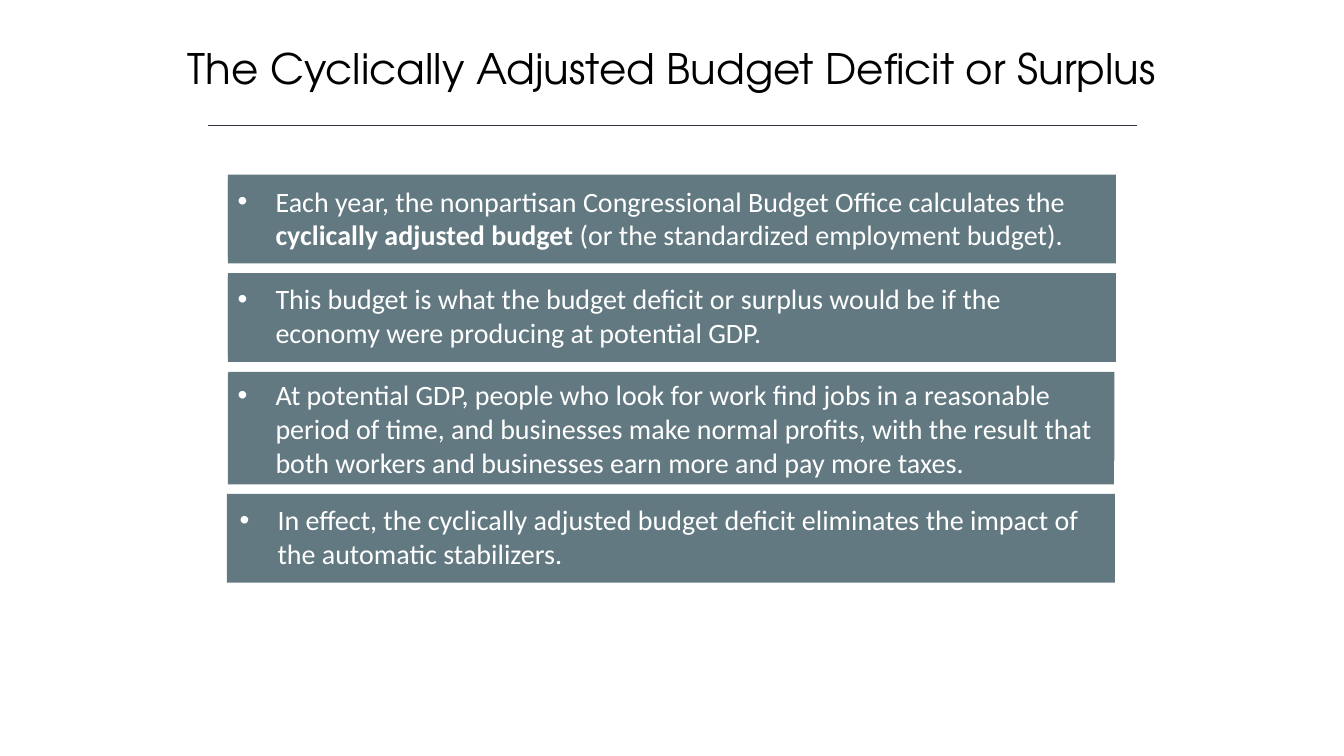
from dataclasses import dataclass

from lxml import etree
from pptx import Presentation
from pptx.dml.color import RGBColor
from pptx.enum.shapes import MSO_CONNECTOR, MSO_SHAPE
from pptx.enum.text import MSO_ANCHOR, MSO_AUTO_SIZE, PP_ALIGN
from pptx.oxml.ns import qn
from pptx.util import Pt

RECTANGLE = MSO_SHAPE.RECTANGLE
STRAIGHT = MSO_CONNECTOR.STRAIGHT
TOP, MIDDLE = MSO_ANCHOR.TOP, MSO_ANCHOR.MIDDLE
LEFT, CENTER = PP_ALIGN.LEFT, PP_ALIGN.CENTER
FIXED, GROW = MSO_AUTO_SIZE.NONE, MSO_AUTO_SIZE.SHAPE_TO_FIT_TEXT
TITLE_ONLY = 5


@dataclass(frozen=True)
class Theme:
    heading: str = "000000"
    rule: str = "323542"
    card: str = "627981"
    card_text: str = "FFFFFF"
    heading_font: str = "TeX Gyre Adventor"
    body_font: str = "Calibri"
    heading_size: float = 30
    body_size: float = 20
    bullet_indent: float = 27


def set_values(target, values):
    for name, value in values.items():
        setattr(target, name, value)


class SlideBuilder:
    def __init__(self, deck, theme):
        self.theme = theme
        self.slide = deck.slides.add_slide(deck.slide_layouts[TITLE_ONLY])

    def add_span(self, para, text, color, **font_values):
        span = para.add_run()
        span.text = text
        set_values(span.font, font_values)
        span.font.color.rgb = RGBColor.from_string(color)

    def title(self, text, left, top, width, height):
        theme = self.theme
        box = self.slide.shapes.title
        set_values(box, {"left": Pt(left), "top": Pt(top),
                         "width": Pt(width), "height": Pt(height)})
        set_values(box.text_frame, {"auto_size": FIXED, "word_wrap": True,
                                    "vertical_anchor": MIDDLE})
        para = box.text_frame.paragraphs[0]
        para.alignment = CENTER
        self.add_span(para, text, theme.heading,
                      name=theme.heading_font, size=Pt(theme.heading_size))

    def rule(self, left, right, top):
        line = self.slide.shapes.add_connector(
            STRAIGHT, Pt(left), Pt(top), Pt(right), Pt(top))
        line.line.width = Pt(1)
        line.line.color.rgb = RGBColor.from_string(self.theme.rule)
        etree.SubElement(line._element.spPr, qn("a:effectLst"))

    def panel(self, shapes, left, top, width, height):
        box = shapes.add_shape(RECTANGLE, Pt(left), Pt(top), Pt(width), Pt(height))
        box.shadow.inherit = False
        box.fill.solid()
        box.fill.fore_color.rgb = RGBColor.from_string(self.theme.card)
        box.line.fill.background()
        return box

    def bullet(self, para):
        indent = Pt(self.theme.bullet_indent)
        properties = para._p.get_or_add_pPr()
        properties.set("marL", str(indent))
        properties.set("indent", str(-indent))
        etree.SubElement(properties, qn("a:buFont"), typeface="Arial")
        etree.SubElement(properties, qn("a:buChar"), char="•")

    def card(self, back, front, spans):
        """Group a back panel with a text panel; spans are (text, bold) pairs."""
        theme = self.theme
        shapes = self.slide.shapes.add_group_shape().shapes
        self.panel(shapes, *back)
        frame = self.panel(shapes, *front).text_frame
        set_values(frame, {"auto_size": GROW, "word_wrap": True,
                           "vertical_anchor": TOP})
        para = frame.paragraphs[0]
        para.alignment = LEFT
        self.bullet(para)
        for text, bold in spans:
            self.add_span(para, text, theme.card_text, name=theme.body_font,
                          size=Pt(theme.body_size), bold=bold)


PANEL_HEIGHT = 63.36
TWO_LINES, THREE_LINES = 55.7, 79.7

# Each card: back (left, top, width), front (left, top, width, height), spans
CARDS = [
    ((162.72, 124.8, 634.32), (162.72, 128, 634.32, TWO_LINES),
     [("Each year, the nonpartisan Congressional Budget Office calculates the ", False),
      ("cyclically adjusted budget ", True),
      ("(or the standardized employment budget).", False)]),
    ((162.72, 195.12, 634.32), (162.72, 197.8, 634.32, TWO_LINES),
     [("This budget is what the budget deficit or surplus would be if the "
       "economy were producing at potential GDP.", False)]),
    ((163.2, 265.68, 632.88), (162.72, 266.4, 632.88, THREE_LINES),
     [("At potential GDP, people who look for work find jobs in a reasonable "
       "period of time, and businesses make normal profits, with the result that "
       "both workers and businesses earn more and pay more taxes.", False)]),
    ((162, 352.8, 634.32), (164.16, 355.68, 631.44, TWO_LINES),
     [("In effect, the cyclically adjusted budget deficit eliminates the impact "
       "of the automatic stabilizers.", False)]),
]


def main():
    deck = Presentation()
    set_values(deck, {"slide_width": Pt(960), "slide_height": Pt(540)})
    page = SlideBuilder(deck, Theme())
    page.title("The Cyclically Adjusted Budget Deficit or Surplus",
               120, 26.64, 720, 43.92)
    page.rule(148.32, 812.16, 89.5)
    for back, front, spans in CARDS:
        page.card((*back, PANEL_HEIGHT), front, spans)
    deck.save("out.pptx")


if __name__ == "__main__":
    main()
